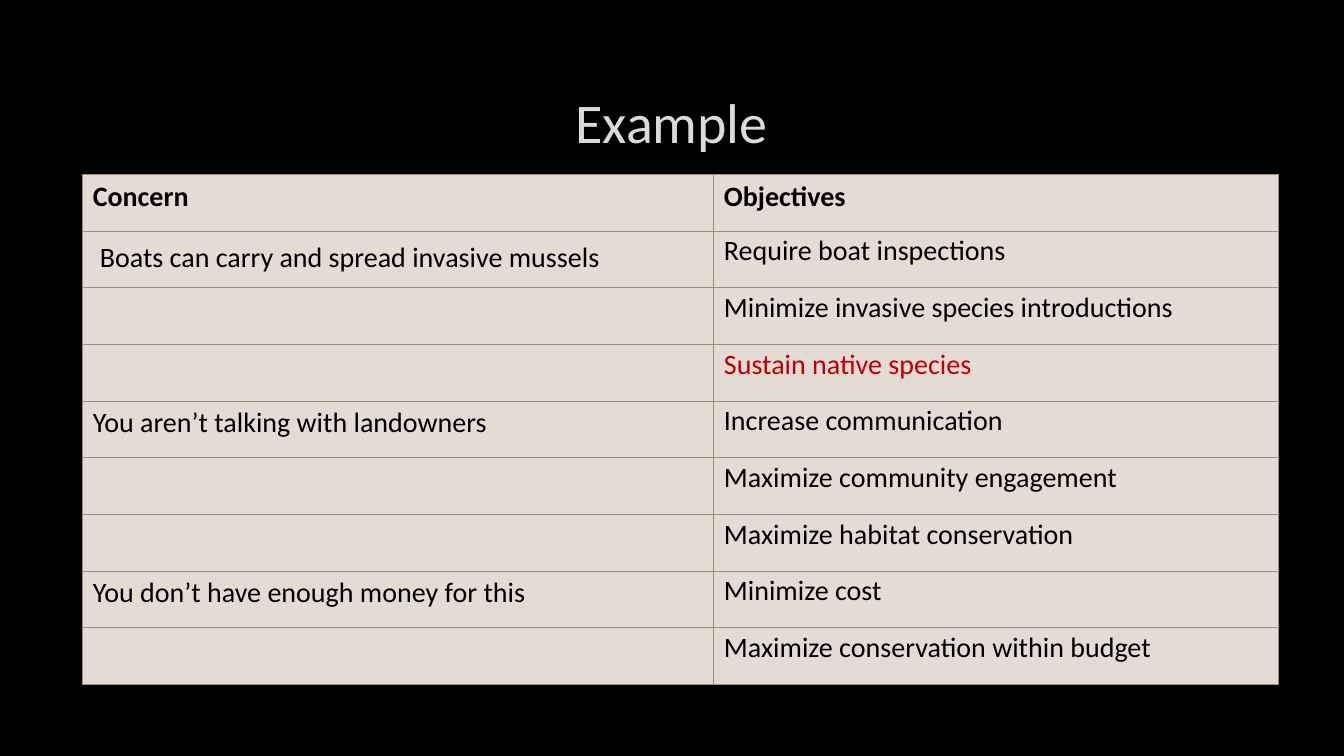
from lxml import etree
from pptx import Presentation
from pptx import util as u
from pptx.dml.color import RGBColor
from pptx.enum import text
from pptx.oxml import ns

HUES = {"back": "000000", "title": "DADADA", "cell": "E4DBD5",
        "rule": "A68C71", "ink": "000000", "key": "C00000"}
ROWS = [
    ("Concern", "Objectives"),
    ("Boats can carry and spread invasive mussels", "Require boat inspections"),
    ("", "Minimize invasive species introductions"),
    ("", "Sustain native species"),
    ("You aren’t talking with landowners", "Increase communication"),
    ("", "Maximize community engagement"),
    ("", "Maximize habitat conservation"),
    ("You don’t have enough money for this", "Minimize cost"),
    ("", "Maximize conservation within budget"),
]
WIDTHS = (6.26, 5.6)
HIGH = 5.06


def style(para, words, hue, **form):
    run = para.add_run()
    run.text = words
    run.font.color.rgb = RGBColor.from_string(HUES[hue])
    for name, value in form.items():
        setattr(run.font, name, value)


def edge(cell):
    props = cell._tc.get_or_add_tcPr()
    for spot, side in enumerate(("lnL", "lnR", "lnT", "lnB")):
        line = etree.Element(ns.qn("a:" + side), w=str(u.Pt(0.75)))
        fill = etree.SubElement(line, ns.qn("a:solidFill"))
        etree.SubElement(fill, ns.qn("a:srgbClr"), val=HUES["rule"])
        props.insert(spot, line)


deck = Presentation()
deck.slide_width, deck.slide_height = u.Inches(13.33), u.Inches(7.5)
slide = deck.slides.add_slide(deck.slide_layouts[6])
slide.background.fill.solid()
slide.background.fill.fore_color.rgb = RGBColor.from_string(HUES["back"])

title = slide.shapes.add_textbox(*map(u.Inches, (1, 0.67, 11.32, 1.06)))
frame = title.text_frame
frame.word_wrap = True
frame.vertical_anchor = text.MSO_ANCHOR.MIDDLE
head = frame.paragraphs[0]
head.alignment = text.PP_ALIGN.CENTER
style(head, "Example", "title", name="Calibri", size=u.Pt(40))

table = slide.shapes.add_table(
    len(ROWS), len(WIDTHS),
    *map(u.Inches, (0.82, 1.73, sum(WIDTHS), HIGH))).table
for col, width in zip(table.columns, WIDTHS):
    col.width = u.Inches(width)
for r, pair in enumerate(ROWS):
    table.rows[r].height = u.Inches(HIGH / len(ROWS))
    for c, words in enumerate(pair):
        cell = table.cell(r, c)
        cell.fill.solid()
        cell.fill.fore_color.rgb = RGBColor.from_string(HUES["cell"])
        edge(cell)
        para = cell.text_frame.paragraphs[0]
        if r and c:
            para.line_spacing = 0.9
        if words.startswith("Boats"):
            para.line_spacing = 1.15
            para._p.get_or_add_pPr().set("marL", str(u.Inches(0.07)))
        if words:
            hue = "key" if words.startswith("Sustain") else "ink"
            style(para, words, hue, name="Calibri", size=u.Pt(20), bold=r == 0)

deck.save("out.pptx")
